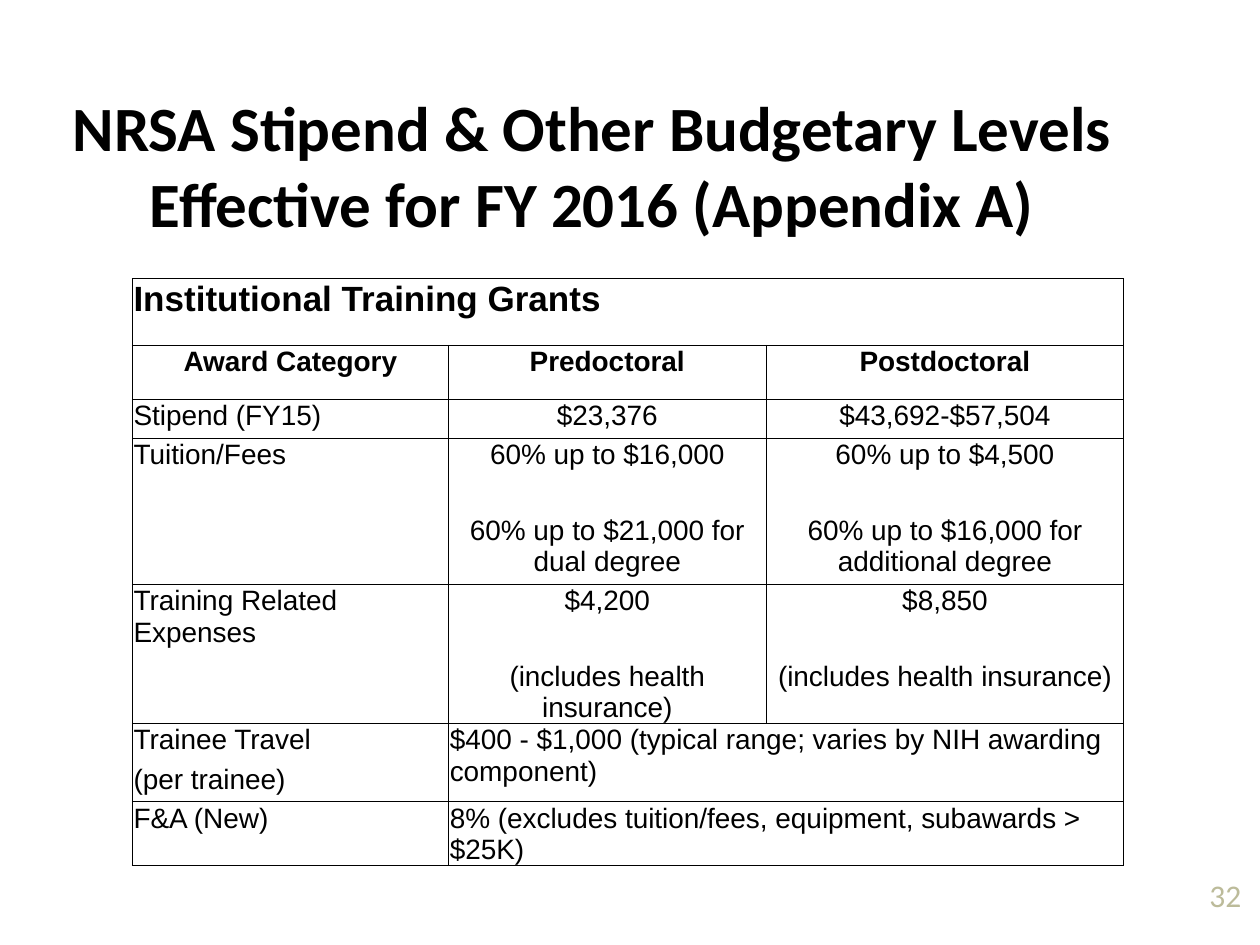
from lxml import etree
from pptx import Presentation
from pptx import util as u
from pptx.dml.color import RGBColor
from pptx.enum import text
from pptx.oxml.ns import qn

BLACK, WHITE = "000000", "FFFFFF"
COLUMN_WIDTHS = [2.51, 2.52, 2.84]
ROW_HEIGHTS = [0.53, 0.43, 0.31, 0.31, 0.29, 0.56, 0.31, 0.29] + [0.31] * 4
GRANT_ROWS = [
    ["Institutional Training Grants", "", ""],
    ["Award Category", "Predoctoral", "Postdoctoral"],
    ["Stipend (FY15)", "$23,376", "$43,692-$57,504"],
    ["Tuition/Fees", "60% up to $16,000", "60% up to $4,500"],
    ["", "", ""],
    ["", "60% up to $21,000 for dual degree", "60% up to $16,000 for additional degree"],
    ["Training Related Expenses", "$4,200", "$8,850"],
    ["", "", ""],
    ["", "(includes health insurance)", "(includes health insurance)"],
    ["Trainee Travel", "$400 - $1,000 (typical range; varies by NIH awarding component)", ""],
    ["(per trainee)", "", ""],
    ["F&A (New)", "8% (excludes tuition/fees, equipment, subawards > $25K)", ""],
]
MERGES = [((0, 0), (0, 2)), ((3, 0), (5, 0)), ((6, 0), (8, 0)),
          ((9, 1), (10, 2)), ((11, 1), (11, 2))]
OPEN_BELOW = {3, 4, 6, 7, 9}
HEADER_ROW = 1
FIRST_WIDE_ROW = 9


def color(value):
    return RGBColor.from_string(value)


def apply(target, values):
    for name, value in values.items():
        setattr(target, name, value)


def write(paragraph, words, size, font, ink, bold=False, align=text.PP_ALIGN.LEFT):
    paragraph.alignment = align
    run = paragraph.add_run()
    run.text = words
    apply(run.font, {"size": u.Pt(size), "name": font, "bold": bold})
    run.font.color.rgb = color(ink)


def add_border(cell, side, points):
    line = etree.SubElement(cell._tc.get_or_add_tcPr(), qn("a:ln" + side), w=str(u.Pt(points)))
    if points:
        fill = etree.SubElement(line, qn("a:solidFill"))
        etree.SubElement(fill, qn("a:srgbClr"), val=BLACK)
    else:
        etree.SubElement(line, qn("a:noFill"))


def border_widths(row, column):
    def edge_below(upper):
        if upper in OPEN_BELOW:
            return 0
        return 1 if (upper, column) == (HEADER_ROW, 0) else 0.5

    return {"L": 0.5, "R": 0.5, "T": edge_below(row - 1), "B": edge_below(row)}


def fill_cell(cell, words, row, column):
    inset = u.Inches(0.01)
    apply(cell, {"margin_left": inset, "margin_right": inset, "margin_top": inset,
                 "margin_bottom": 0, "vertical_anchor": text.MSO_ANCHOR.TOP})
    for side, points in border_widths(row, column).items():
        add_border(cell, side, points)
    cell.fill.solid()
    cell.fill.fore_color.rgb = color(WHITE)
    paragraph = cell.text_frame.paragraphs[0]
    size = 20 if row == 0 else 16
    if words:
        centred = row == HEADER_ROW or (column > 0 and row < FIRST_WIDE_ROW)
        align = text.PP_ALIGN.CENTER if centred else text.PP_ALIGN.LEFT
        write(paragraph, words, size, "Arial", BLACK, row <= HEADER_ROW, align)
    else:
        etree.SubElement(paragraph._p, qn("a:endParaRPr"), sz=str(size * 100))


def add_title(slide, words):
    title = slide.shapes.title
    apply(title, {"left": 0, "top": u.Inches(0.68),
                  "width": u.Inches(9.4), "height": u.Inches(1.25)})
    apply(title.text_frame, {"word_wrap": True, "auto_size": text.MSO_AUTO_SIZE.NONE,
                             "vertical_anchor": text.MSO_ANCHOR.MIDDLE})
    write(title.text_frame.paragraphs[0], words, 36, "Calibri", BLACK, True,
          text.PP_ALIGN.CENTER)


def add_grants(slide):
    frame = slide.shapes.add_table(len(ROW_HEIGHTS), len(COLUMN_WIDTHS), u.Inches(1.05),
                                   u.Inches(2.21), u.Inches(7.88), u.Inches(4.72))
    grants = frame.table
    apply(grants, {"first_row": False, "horz_banding": False})
    for column, width in zip(grants.columns, COLUMN_WIDTHS):
        column.width = u.Inches(width)
    for row, height in zip(grants.rows, ROW_HEIGHTS):
        row.height = u.Inches(height)
    for r, entries in enumerate(GRANT_ROWS):
        for c, words in enumerate(entries):
            fill_cell(grants.cell(r, c), words, r, c)
    for first, last in MERGES:
        grants.cell(*first).merge(grants.cell(*last))
    frame.height = u.Inches(4.72)


def add_page_number(slide, number):
    page = slide.shapes.add_textbox(u.Inches(9.5), u.Inches(6.9), u.Inches(0.5), u.Inches(0.52))
    page.text_frame.word_wrap = True
    write(page.text_frame.paragraphs[0], number, 18, "Calibri", "BCBB9A")


def main():
    deck = Presentation()
    apply(deck, {"slide_width": u.Inches(10), "slide_height": u.Inches(7.5)})
    slide = deck.slides.add_slide(deck.slide_layouts[5])
    add_title(slide, "NRSA Stipend & Other Budgetary Levels Effective for FY 2016 (Appendix A)")
    add_grants(slide)
    add_page_number(slide, "32")
    deck.save("out.pptx")


if __name__ == "__main__":
    main()
